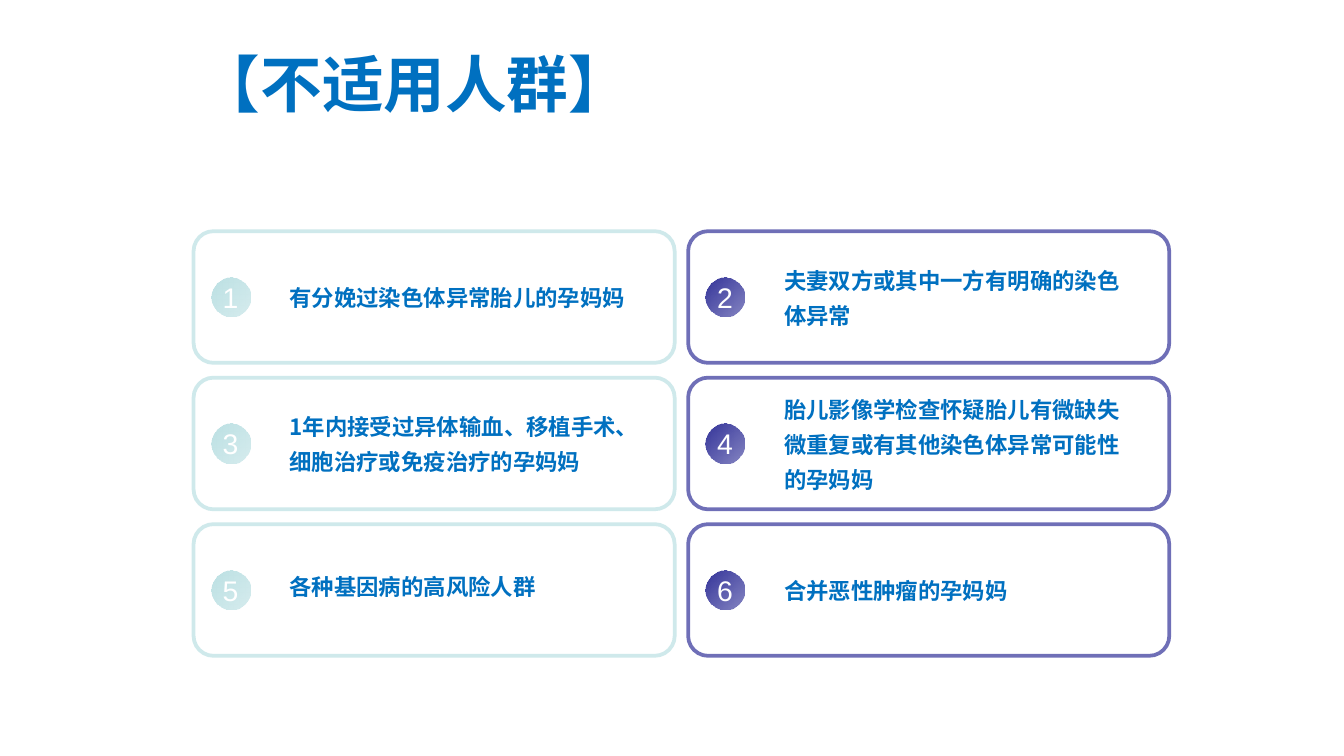
from lxml import etree
from pptx import Presentation
from pptx.dml.color import RGBColor
from pptx.enum.shapes import MSO_SHAPE
from pptx.enum.text import MSO_ANCHOR, PP_ALIGN
from pptx.oxml.ns import qn
from pptx.util import Inches, Pt

ROUNDED = MSO_SHAPE.ROUNDED_RECTANGLE
OVAL = MSO_SHAPE.OVAL
MIDDLE = MSO_ANCHOR.MIDDLE
LEFT, CENTER = PP_ALIGN.LEFT, PP_ALIGN.CENTER

CJK_FONT, NUMBER_FONT = "Noto Sans CJK SC", "Arial"
BLUE, WHITE = "0070C0", "FFFFFF"
COLUMN_COLORS = ["BBE0E3", "333399"]

GRID_LEFT, GRID_TOP = 1.44, 1.72
COLUMN_STEP, ROW_STEP = 3.68, 1.09
CARD_WIDTH, CARD_HEIGHT = 3.58, 0.98
BADGE_SIZE, BADGE_INSET = 0.29, 0.13

GROUPS = [
    "有分娩过染色体异常胎儿的孕妈妈",
    "夫妻双方或其中一方有明确的染色体异常",
    "1年内接受过异体输血、移植手术、细胞治疗或免疫治疗的孕妈妈",
    "胎儿影像学检查怀疑胎儿有微缺失微重复或有其他染色体异常可能性的孕妈妈",
    "各种基因病的高风险人群",
    "合并恶性肿瘤的孕妈妈",
]
SINGLE_SPACED = {5}


def rgb(hex_color):
    return RGBColor.from_string(hex_color)


def set_opacity(color_parent, percent):
    """Set the opacity of the one RGB colour inside an XML element."""
    color = color_parent.find(".//" + qn("a:srgbClr"))
    etree.SubElement(color, qn("a:alpha"), val=str(percent * 1000))


def write(frame, text, size, color, font=CJK_FONT, bold=True, align=LEFT):
    frame.text = text
    frame.vertical_anchor = MIDDLE
    paragraph = frame.paragraphs[0]
    paragraph.alignment = align
    run = paragraph.runs[0]
    run.font.size = Pt(size)
    run.font.bold = bold
    run.font.name = font
    run.font.color.rgb = rgb(color)
    etree.SubElement(run.font._element, qn("a:ea"), typeface=font)


def add_title(slide, text):
    title = slide.shapes.title
    title.left, title.top = Inches(1.38), Inches(0.15)
    title.width, title.height = Inches(7.72), Inches(0.94)
    write(title.text_frame, text, 33, BLUE)


def add_card(slide, left, top, text, color, spacing):
    card = slide.shapes.add_shape(ROUNDED, Inches(left), Inches(top),
                                  Inches(CARD_WIDTH), Inches(CARD_HEIGHT))
    card.shadow.inherit = False
    card.adjustments[0] = 0.152
    card.fill.solid()
    card.fill.fore_color.rgb = rgb(WHITE)
    card.line.color.rgb = rgb(color)
    card.line.width = Pt(2)
    properties = card.element.spPr
    set_opacity(properties.find(qn("a:solidFill")), 10)
    set_opacity(properties.find(qn("a:ln")), 70)

    frame = card.text_frame
    frame.word_wrap = True
    frame.margin_left, frame.margin_right = Inches(0.67), Inches(0.17)
    frame.margin_top, frame.margin_bottom = Inches(0), Inches(0.05)
    write(frame, text, 12, BLUE)
    frame.paragraphs[0].line_spacing = spacing


def add_badge(slide, left, top, number, color):
    badge = slide.shapes.add_shape(OVAL, Inches(left), Inches(top),
                                   Inches(BADGE_SIZE), Inches(BADGE_SIZE))
    badge.shadow.inherit = False
    badge.line.fill.background()
    badge.fill.gradient()
    badge.fill.gradient_angle = 315
    for stop in badge.fill.gradient_stops:
        stop.color.rgb = rgb(color)
    last_stop = badge.element.spPr.findall(".//" + qn("a:gs"))[-1]
    set_opacity(last_stop, 59)

    badge.text_frame.word_wrap = False
    write(badge.text_frame, str(number), 15.2, WHITE, NUMBER_FONT, False, CENTER)


def main():
    presentation = Presentation()
    presentation.slide_width = Inches(10)
    presentation.slide_height = Inches(10 * 9 / 16)
    slide = presentation.slides.add_slide(presentation.slide_layouts[5])
    add_title(slide, "【不适用人群】")

    for index, text in enumerate(GROUPS):
        number = index + 1
        row, column = divmod(index, 2)
        left = GRID_LEFT + column * COLUMN_STEP
        top = GRID_TOP + row * ROW_STEP
        color = COLUMN_COLORS[column]
        spacing = 1.0 if number in SINGLE_SPACED else 1.3
        add_card(slide, left, top, text, color, spacing)
        badge_top = top + (CARD_HEIGHT - BADGE_SIZE) / 2
        add_badge(slide, left + BADGE_INSET, badge_top, number, color)

    presentation.save("out.pptx")


if __name__ == "__main__":
    main()
